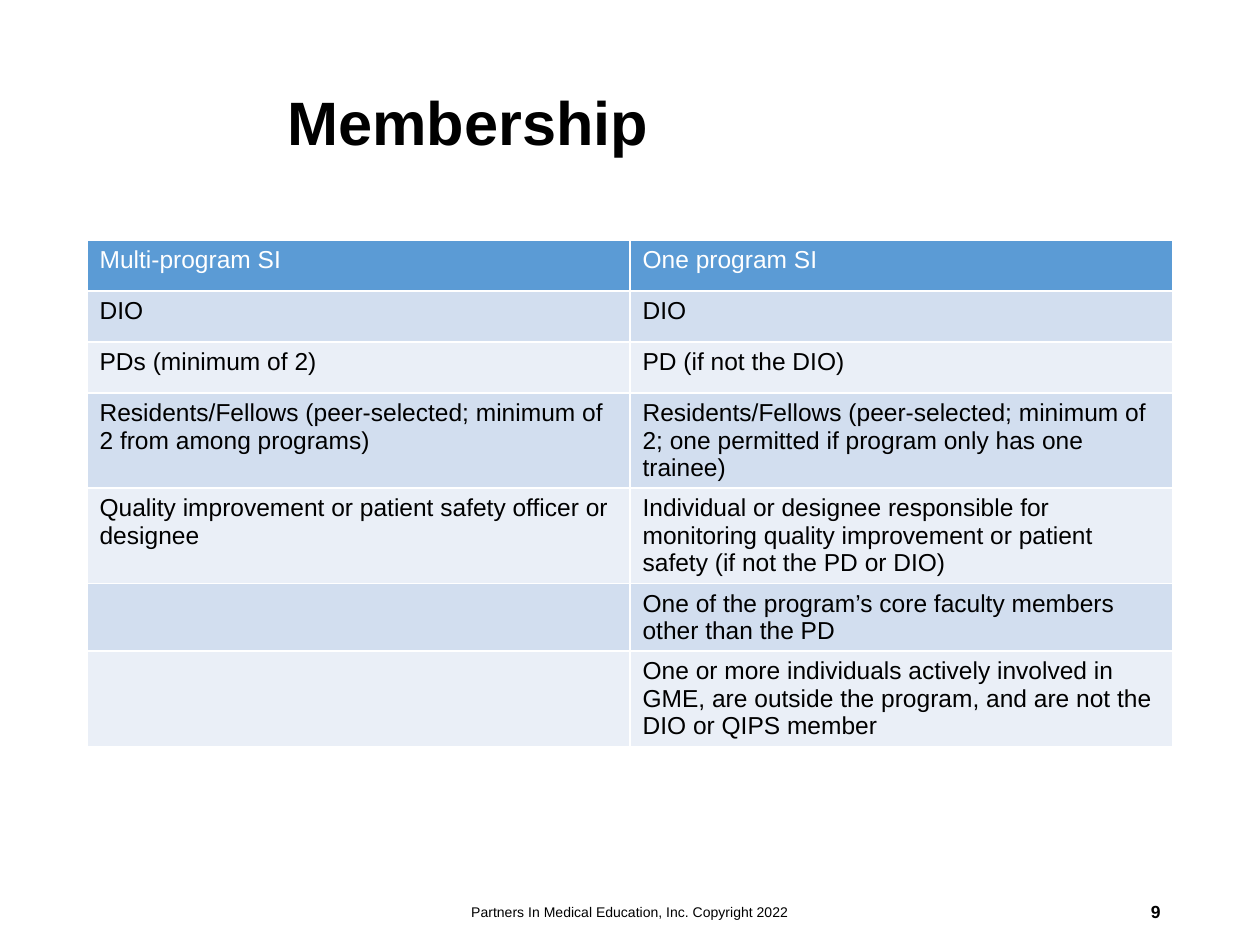
from dataclasses import dataclass

from lxml.etree import SubElement
from pptx import Presentation
from pptx.dml.color import RGBColor
from pptx.enum.text import MSO_ANCHOR, PP_ALIGN
from pptx.oxml.ns import qn
from pptx.util import Pt

PX = 914400 / 126
FONT = "Arial"
WHITE, BLACK, BLUE = "FFFFFF", "000000", "5B9BD5"
BANDS = ("D2DEEF", "EAEFF7")

MEMBERS = [
    ("Multi-program SI", "One program SI"),
    ("DIO", "DIO"),
    ("PDs (minimum of 2)", "PD (if not the DIO)"),
    ("Residents/Fellows (peer-selected; minimum of 2 from among programs)",
     "Residents/Fellows (peer-selected; minimum of 2; one permitted if "
     "program only has one trainee)"),
    ("Quality improvement or patient safety officer or designee",
     "Individual or designee responsible for monitoring quality improvement "
     "or patient safety (if not the PD or DIO)"),
    ("", "One of the program’s core faculty members other than the PD"),
    ("", "One or more individuals actively involved in GME, are outside the "
     "program, and are not the DIO or QIPS member"),
]


@dataclass
class Label:
    text: str
    x: int
    y: int
    w: int
    h: int
    size: int
    bold: bool = False
    align: PP_ALIGN = PP_ALIGN.LEFT
    spacing: float = 1.0


LABELS = [
    Label("Membership", 275, 34, 900, 183, 35, bold=True, spacing=0.9),
    Label("Partners In Medical Education, Inc. Copyright 2022",
          417, 887, 426, 50, 8, align=PP_ALIGN.CENTER),
    Label("9", 890, 887, 283, 50, 10, bold=True, align=PP_ALIGN.RIGHT),
]


def px(n: int) -> int:
    return round(n * PX)


def rgb(value: str) -> RGBColor:
    return RGBColor.from_string(value)


def set_font(p, size: int, color: str, bold: bool = False) -> None:
    p.font.name = FONT
    p.font.size = Pt(size)
    p.font.bold = bold
    p.font.color.rgb = rgb(color)


def add_label(s, label: Label) -> None:
    sp = s.shapes.add_textbox(px(label.x), px(label.y), px(label.w), px(label.h))
    tf = sp.text_frame
    tf.word_wrap = True
    tf.vertical_anchor = MSO_ANCHOR.MIDDLE
    p = tf.paragraphs[0]
    p.text = label.text
    p.alignment = label.align
    p.line_spacing = label.spacing
    set_font(p, label.size, BLACK, label.bold)


def set_borders(cell, color: str, width: int) -> None:
    """Put the side lines ahead of the fill, as the cell schema requires."""
    tc_pr = cell._tc.get_or_add_tcPr()
    for i, side in enumerate(("lnL", "lnR", "lnT", "lnB")):
        ln = SubElement(tc_pr, qn(f"a:{side}"), w=str(Pt(width)))
        fill = SubElement(ln, qn("a:solidFill"))
        SubElement(fill, qn("a:srgbClr"), val=color)
        tc_pr.insert(i, ln)


def add_member_table(s, x: int, y: int, w: int, row_h: int) -> None:
    rows, cols = len(MEMBERS), len(MEMBERS[0])
    table = s.shapes.add_table(
        rows, cols, px(x), px(y), px(w), px(row_h * rows)).table
    table.first_row = table.horz_banding = False
    for i, texts in enumerate(MEMBERS):
        table.rows[i].height = px(row_h)
        for j, text in enumerate(texts):
            cell = table.cell(i, j)
            cell.fill.solid()
            cell.fill.fore_color.rgb = rgb(BANDS[(i - 1) % 2] if i else BLUE)
            set_borders(cell, WHITE, 1)
            p = cell.text_frame.paragraphs[0]
            p.text = text
            set_font(p, 14, BLACK if i else WHITE)


def main() -> None:
    prs = Presentation()
    prs.slide_width, prs.slide_height = px(1260), px(945)
    s = prs.slides.add_slide(prs.slide_layouts[6])
    add_member_table(s, x=87, y=240, w=1086, row_h=51)
    for label in LABELS:
        add_label(s, label)
    prs.save("out.pptx")


if __name__ == "__main__":
    main()
